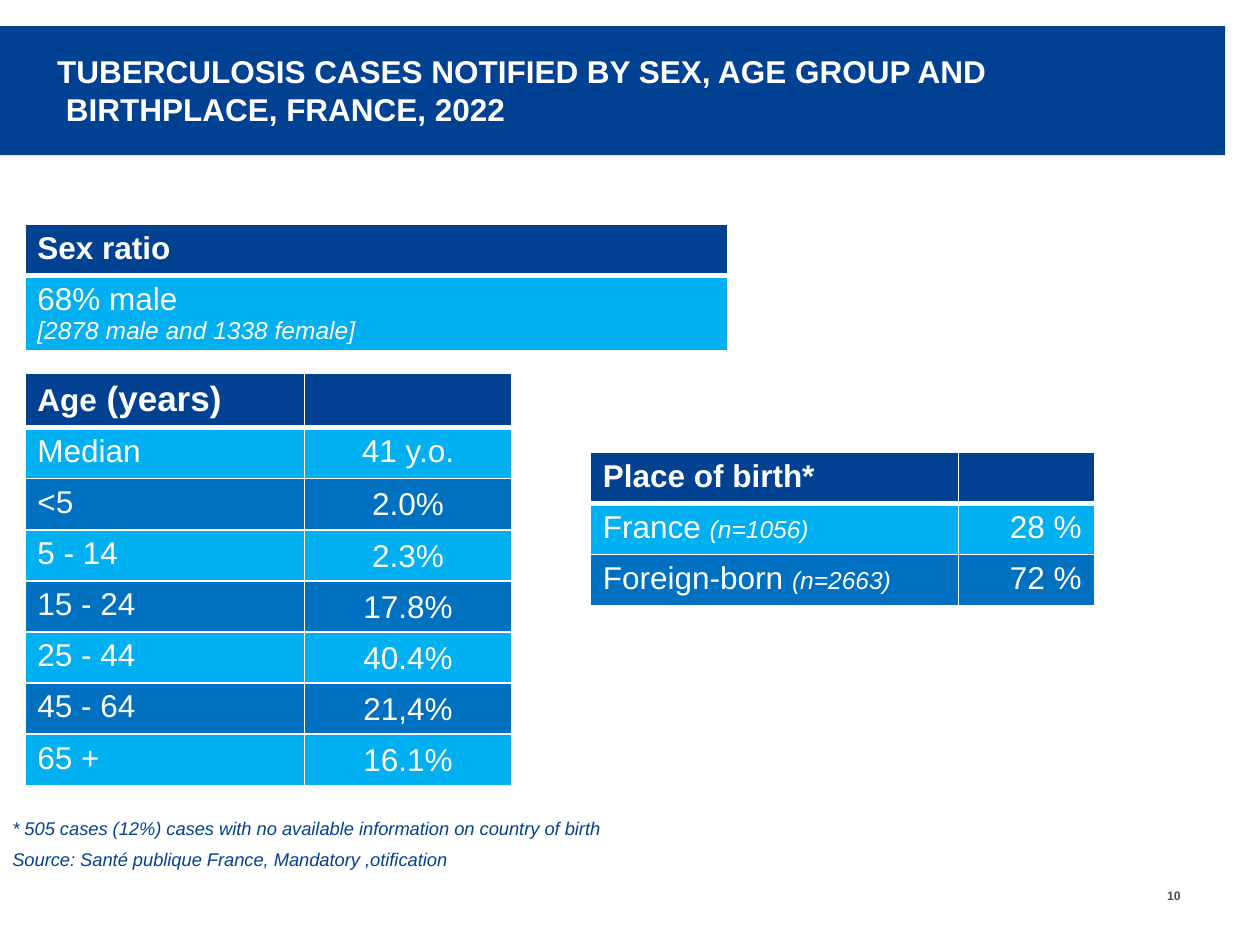
from lxml.etree import SubElement
from pptx import Presentation
from pptx.dml.color import RGBColor
from pptx.enum.shapes import MSO_SHAPE
from pptx.enum.text import MSO_ANCHOR, PP_ALIGN
from pptx.oxml.ns import qn
from pptx.util import Cm, Pt

NAVY = RGBColor(0x00, 0x41, 0x92)
BLUE = RGBColor(0x00, 0x70, 0xC0)
SKY = RGBColor(0x00, 0xB0, 0xF0)
WHITE = RGBColor(0xFF, 0xFF, 0xFF)
GREY = RGBColor(0x4D, 0x4D, 0x4F)


def write_spans(para, spans, color, bold=False):
    """Add (text, size, italic) spans to a paragraph."""
    for text, size, italic in spans:
        span = para.add_run()
        span.text = text
        span.font.name = "Arial"
        span.font.size = Pt(size)
        span.font.bold = bold
        span.font.italic = italic
        span.font.color.rgb = color


def add_borders(cell, bottom):
    """Draw white cell borders, 1 pt apart from the bottom one."""
    properties = cell._tc.get_or_add_tcPr()
    for side, width in (("L", 1), ("R", 1), ("T", 1), ("B", bottom)):
        line = SubElement(properties, qn(f"a:ln{side}"), w=str(Pt(width)))
        fill = SubElement(line, qn("a:solidFill"))
        SubElement(fill, qn("a:srgbClr"), val=str(WHITE))


deck = Presentation()
deck.slide_width, deck.slide_height = Cm(25.4), Cm(19.05)
slide = deck.slides.add_slide(deck.slide_layouts[5])

# Title on its band
title = slide.shapes.title
band = slide.shapes.add_shape(MSO_SHAPE.RECTANGLE, 0, Cm(0.53), Cm(24.7), Cm(2.6))
band.shadow.inherit = False
band.fill.solid()
band.fill.fore_color.rgb = NAVY
band.line.fill.background()
title.element.addprevious(band.element)

title.left, title.top, title.width, title.height = Cm(0.9), Cm(0.92), Cm(20.6), Cm(1.8)
title.text_frame.text = (
    "TUBERCULOSIS CASES NOTIFIED BY SEX, AGE GROUP AND \v BIRTHPLACE, FRANCE, 2022"
)
title.text_frame.vertical_anchor = MSO_ANCHOR.MIDDLE
heading = title.text_frame.paragraphs[0]
heading.alignment = PP_ALIGN.LEFT
for span in heading.runs:
    span.font.name = "Arial"
    span.font.size = Pt(18)
    span.font.bold = True
    span.font.color.rgb = WHITE

# Tables: each cell is a list of paragraphs, each paragraph a list of spans
ages = [
    ("Median", "41 y.o."), ("<5", "2.0%"), ("5 - 14", "2.3%"), ("15 - 24", "17.8%"),
    ("25 - 44", "40.4%"), ("45 - 64", "21,4%"), ("65 +", "16.1%"),
]
births = [("France ", "(n=1056)", "28 %"), ("Foreign-born ", "(n=2663)", "72 %")]

sex_rows = [
    [[[("Sex ratio", 18, False)]]],
    [[[("68% male", 18, False)], [("[2878 male and 1338 female]", 14, True)]]],
]
age_rows = [[[[("Age", 18, False), (" (years)", 20, False)]], []]]
age_rows += [[[[(group, 18, False)]], [[(share, 18, False)]]] for group, share in ages]
birth_rows = [[[[("Place of birth*", 18, False)]], []]]
birth_rows += [
    [[[(place, 18, False), (count, 14, True)]], [[(share, 18, False)]]]
    for place, count, share in births
]

# left, top, column widths, row heights, alignment of the last column, rows
tables = [
    (0.5, 4.52, [14.17], [1.03, 1.5], PP_ALIGN.LEFT, sex_rows),
    (0.5, 7.53, [5.64, 4.17], [1.09] + [1.03] * 7, PP_ALIGN.CENTER, age_rows),
    (11.9, 9.12, [7.42, 2.74], [1.03] * 3, PP_ALIGN.RIGHT, birth_rows),
]
for left, top, widths, heights, alignment, rows in tables:
    table = slide.shapes.add_table(
        len(rows), len(widths), Cm(left), Cm(top), Cm(sum(widths)), Cm(sum(heights))
    ).table
    table.horz_banding = False
    for column, width in zip(table.columns, widths):
        column.width = Cm(width)
    for r, (row, height) in enumerate(zip(rows, heights)):
        table.rows[r].height = Cm(height)
        for c, paragraphs in enumerate(row):
            cell = table.cell(r, c)
            add_borders(cell, 3 if r == 0 else 1)
            cell.fill.solid()
            cell.fill.fore_color.rgb = NAVY if r == 0 else SKY if r % 2 else BLUE
            for p, spans in enumerate(paragraphs):
                box = cell.text_frame
                para = box.add_paragraph() if p else box.paragraphs[0]
                para.alignment = alignment if c else PP_ALIGN.LEFT
                write_spans(para, spans, WHITE, bold=r == 0)
            if rows is age_rows and c == 1 and r > 1:
                cell.vertical_anchor = MSO_ANCHOR.MIDDLE
                cell.margin_left = cell.margin_right = cell.margin_top = Cm(0.03)
                cell.margin_bottom = 0

# Footnotes
notes = slide.shapes.add_textbox(0, Cm(16.34), Cm(24.4), Cm(1.37)).text_frame
notes.word_wrap = True
footnotes = [
    "* 505 cases (12%) cases with no available information on country of birth",
    "Source: Santé publique France, Mandatory ,otification",
]
for index, text in enumerate(footnotes):
    para = notes.add_paragraph() if index else notes.paragraphs[0]
    if index:
        para.space_before = Pt(5.25)
    write_spans(para, [(text, 10.5, True)], NAVY)

# Page number
number = slide.shapes.add_textbox(Cm(23.21), Cm(17.9), Cm(0.69), Cm(0.33)).text_frame
number.margin_left = number.margin_right = Cm(0.1)
number.margin_top = number.margin_bottom = 0
number.word_wrap = False
number.paragraphs[0].alignment = PP_ALIGN.RIGHT
write_spans(number.paragraphs[0], [("10", 7, False)], GREY, bold=True)

deck.save("out.pptx")
